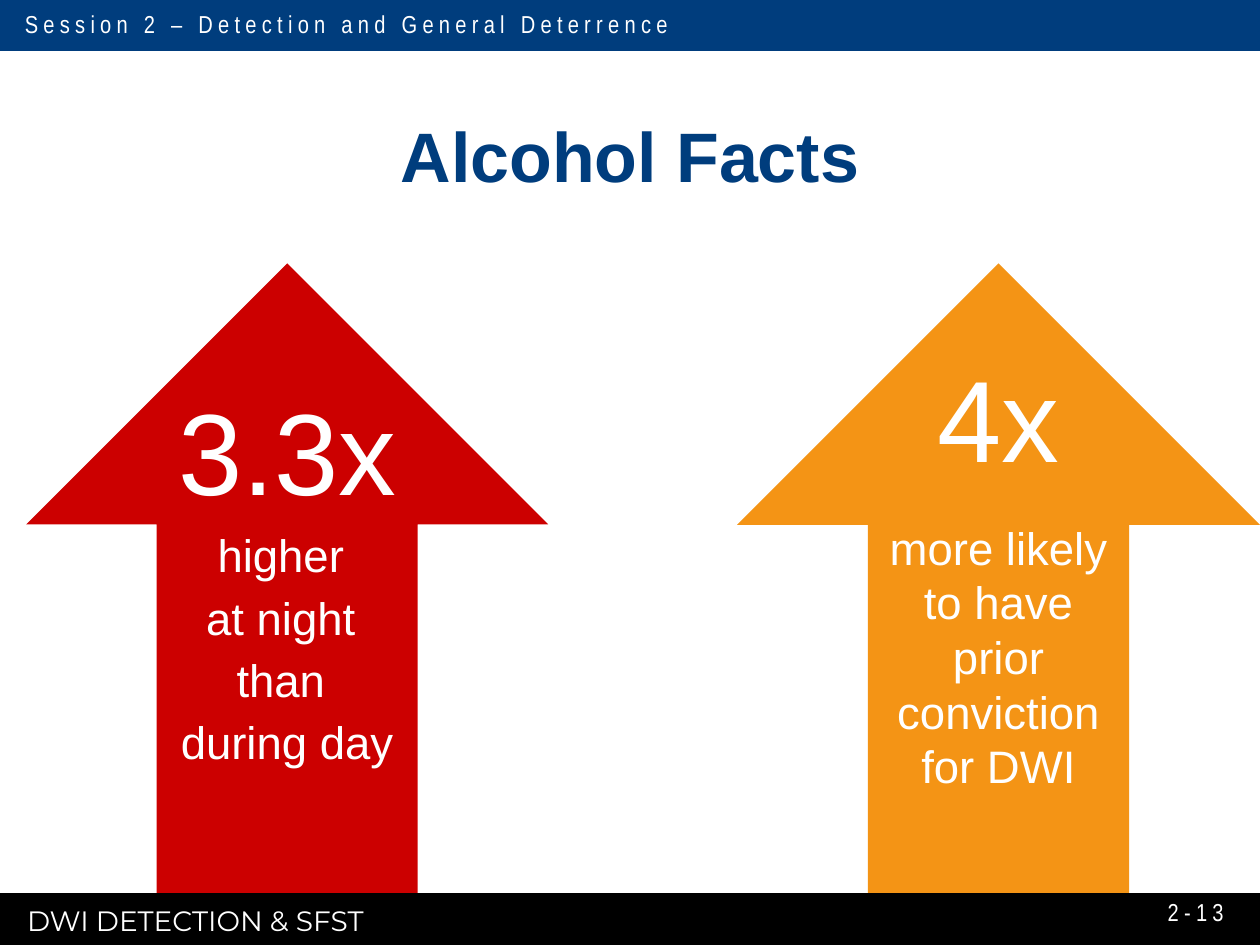
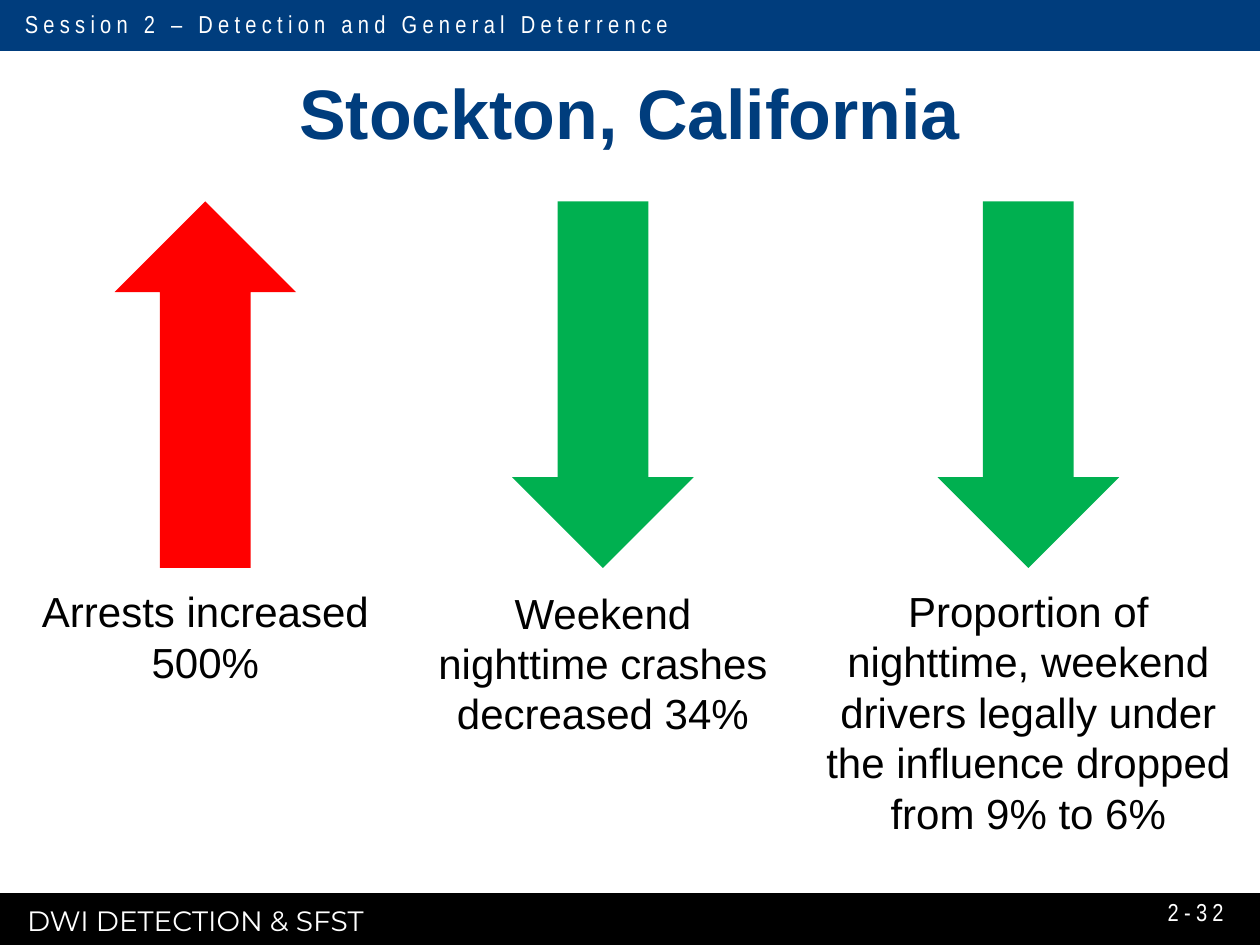
from dataclasses import dataclass

from pptx import Presentation
from pptx.dml.color import RGBColor
from pptx.enum.shapes import MSO_SHAPE
from pptx.enum.text import MSO_ANCHOR, PP_ALIGN
from pptx.util import Cm, Pt

NAVY = RGBColor(0x00, 0x3D, 0x7D)
BLACK = RGBColor(0x00, 0x00, 0x00)
WHITE = RGBColor(0xFF, 0xFF, 0xFF)
CRIMSON = RGBColor(0xCC, 0x00, 0x00)
ORANGE = RGBColor(0xF4, 0x94, 0x15)
RED = RGBColor(0xFF, 0x00, 0x00)
GREEN = RGBColor(0x00, 0xB0, 0x50)

PAGE_WIDTH, PAGE_HEIGHT = 25.4, 19.05
BAND_HEIGHT = 1.02


@dataclass
class Box:
    left: float
    top: float
    width: float
    height: float

    def lengths(self):
        return Cm(self.left), Cm(self.top), Cm(self.width), Cm(self.height)

    def centred(self, top, width, height):
        return Box(self.left + (self.width - width) / 2, self.top + top, width, height)


def add_text(page, box, text, size=24, font="Arial", color=BLACK, bold=False,
             align=PP_ALIGN.CENTER, anchor=MSO_ANCHOR.TOP, spacing=None,
             tracking=None, inset=False):
    frame = page.shapes.add_textbox(*box.lengths()).text_frame
    frame.word_wrap = True
    frame.vertical_anchor = anchor
    if not inset:
        frame.margin_left = frame.margin_right = 0
        frame.margin_top = frame.margin_bottom = 0
    for index, line in enumerate(text.split("\n")):
        para = frame.add_paragraph() if index else frame.paragraphs[0]
        para.alignment = align
        para.line_spacing = spacing
        span = para.add_run()
        span.text = line
        span.font.name = font
        span.font.size = Pt(size)
        span.font.bold = bold
        span.font.color.rgb = color
        if tracking:
            span.font._element.set("spc", str(tracking * 100))


def add_filled(page, kind, box, color, outline=None):
    shape = page.shapes.add_shape(kind, *box.lengths())
    shape.shadow.inherit = False
    shape.fill.solid()
    shape.fill.fore_color.rgb = color
    if outline:
        shape.line.color.rgb = color
        shape.line.width = Pt(outline)
    else:
        shape.line.fill.background()
    return shape


def add_frame(page, number):
    label = dict(size=14, font="Arial Narrow", color=WHITE, tracking=3, inset=True)
    for top, color in ((18.03, BLACK), (-0.02, NAVY)):
        band = Box(0, top, PAGE_WIDTH, BAND_HEIGHT)
        add_filled(page, MSO_SHAPE.RECTANGLE, band, color, outline=2)
    add_text(page, Box(0.25, 0.05, 21.87, 0.86),
             "Session 2 – Detection and General Deterrence",
             align=PP_ALIGN.LEFT, **label)
    add_text(page, Box(0.3, 18.08, 17.68, 0.94), "DWI DETECTION & SFST", size=16,
             font="Montserrat", color=WHITE, align=PP_ALIGN.LEFT, inset=True)
    add_text(page, Box(19, 17.86, 5.92, 1.02), number,
             align=PP_ALIGN.RIGHT, anchor=MSO_ANCHOR.MIDDLE, **label)


def add_title(page, box, text):
    add_text(page, box, text, size=40, color=NAVY, bold=True, anchor=MSO_ANCHOR.MIDDLE)


def add_fact_arrow(page, box, color, figure, figure_top, fact, fact_width, spacing=None):
    add_filled(page, MSO_SHAPE.UP_ARROW, box, color)
    add_text(page, box.centred(figure_top, 5.2, 3.3), figure, size=66,
             color=WHITE, spacing=spacing)
    add_text(page, box.centred(5.17, fact_width, 7.6), fact, size=26,
             color=WHITE, spacing=spacing)


def add_trend(page, box, color, turn, text, inset):
    arrow = add_filled(page, MSO_SHAPE.UP_ARROW,
                       Box(box.left + box.width / 2 - 1.83, 4.06, 3.66, 7.39), color)
    arrow.rotation = turn
    add_text(page, box, text, inset=inset)


def build_alcohol_facts(page):
    add_frame(page, "2-13")
    add_title(page, Box(1.27, 1.98, 22.86, 2.26), "Alcohol Facts")
    add_fact_arrow(page, Box(0.53, 5.31, 10.52, 12.69), CRIMSON, "3.3x", 1.96,
                   "higher \nat night \nthan \nduring day", 5.18, spacing=1.14)
    add_fact_arrow(page, Box(14.86, 5.31, 10.54, 12.69), ORANGE, "4x", 1.68,
                   "more likely to have prior conviction for DWI", 4.8)


def build_stockton(page):
    add_frame(page, "2-32")
    add_title(page, Box(0.84, 1.19, 23.7, 2.11), "Stockton, California")
    trends = (
        (Box(0, 11.81, 8.28, 2.69), RED, 0, "Arrests increased 500%", False),
        (Box(8.41, 11.71, 7.49, 3.33), GREEN, 180,
         "Weekend nighttime crashes decreased 34%", True),
        (Box(16.26, 11.68, 8.94, 5.38), GREEN, 180,
         "Proportion of nighttime, weekend drivers legally under "
         "the influence dropped from 9% to 6%", True),
    )
    for trend in trends:
        add_trend(page, *trend)


def main():
    deck = Presentation()
    deck.slide_width, deck.slide_height = Cm(PAGE_WIDTH), Cm(PAGE_HEIGHT)
    for build in (build_alcohol_facts, build_stockton):
        build(deck.slides.add_slide(deck.slide_layouts[6]))
    deck.save("out.pptx")


if __name__ == "__main__":
    main()
